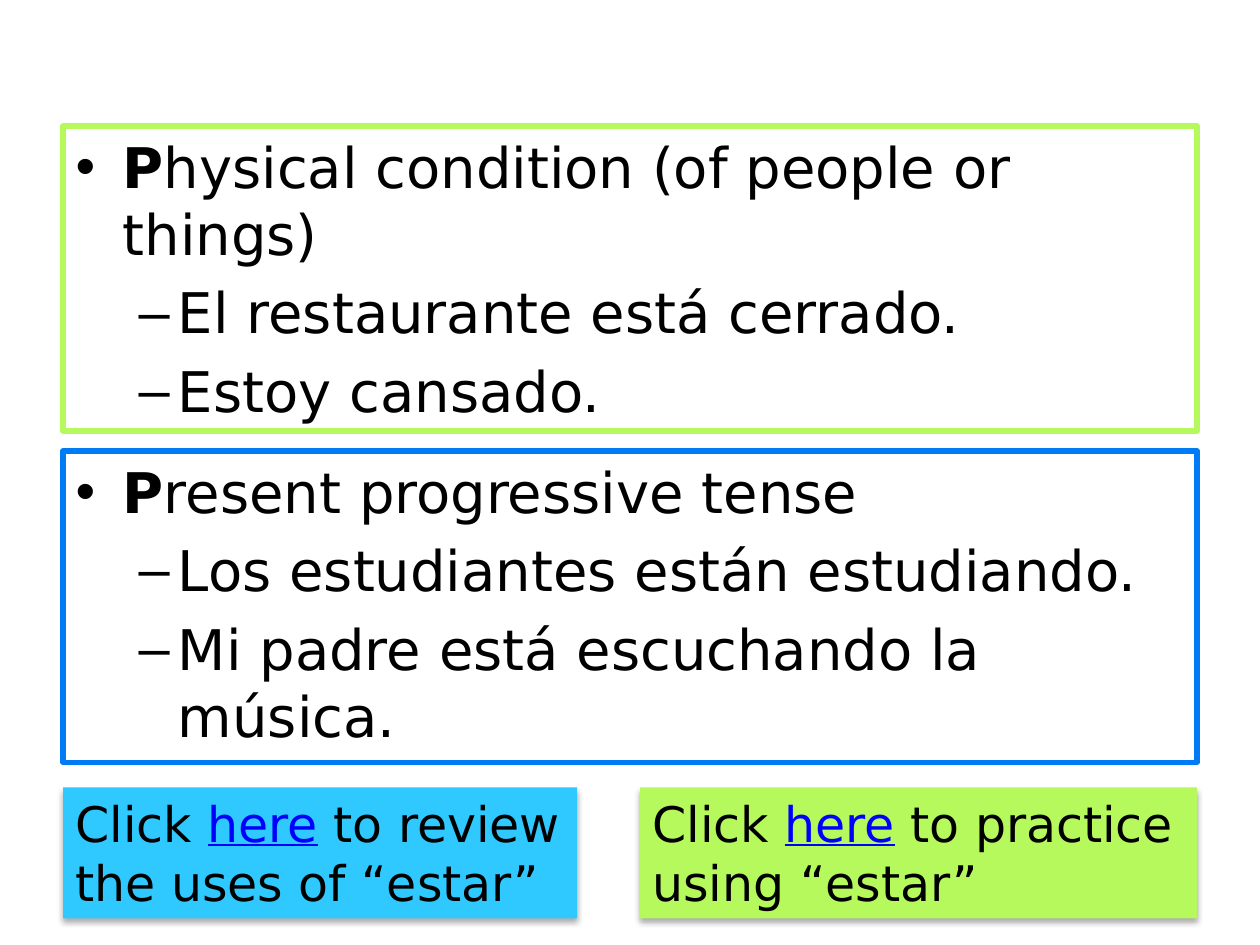
"""Build a slide on two uses of "estar" with a pair of call-out boxes."""
from lxml.etree import SubElement as Sub
from pptx import Presentation
from pptx.dml.color import RGBColor as Rgb
from pptx.enum.text import MSO_AUTO_SIZE as Fit
from pptx.oxml.ns import qn
from pptx.util import Emu, Pt

PX = 9144
FONT = "DejaVu Sans"


def tint(code):
    return Rgb.from_string(code)


def add_run(para, text, size, color="000000", bold=False, line=False):
    run = para.add_run()
    run.text = text
    font = run.font
    font.name, font.size = FONT, Pt(size)
    font.bold, font.underline = bold, line
    font.color.rgb = tint(color)


deck = Presentation()
deck.slide_width, deck.slide_height = Emu(1000 * PX), Emu(750 * PX)
slide = deck.slides.add_slide(deck.slide_layouts[3])
title = slide.shapes.title.element
title.getparent().remove(title)

lists = [
    (1, 100, 242, "B6F95D", "P", "hysical condition (of people or things)",
     ["El restaurante está cerrado.", "Estoy cansado."]),
    (2, 358, 247, "007BF6", "P", "resent progressive tense",
     ["Los estudiantes están estudiando.",
      "Mi padre está escuchando la música."]),
]
for idx, top, high, edge, first, rest, items in lists:
    body = slide.placeholders[idx]
    body.left, body.top = Emu(50 * PX), Emu(top * PX)
    body.width, body.height = Emu(900 * PX), Emu(high * PX)
    body.line.color.rgb = tint(edge)
    body.line.width = Pt(3)
    frame = body.text_frame
    frame.auto_size = Fit.NONE
    para = frame.paragraphs[0]
    add_run(para, first, 32, bold=True)
    add_run(para, rest, 32)
    for item in items:
        para = frame.add_paragraph()
        para.level = 1
        add_run(para, item, 32)

group = slide.shapes.add_group_shape()
notes = [
    (50, 408, "2FC9FF", " to review the uses of “estar”"),
    (508, 442, "B6F95D", " to practice using “estar”"),
]
for left, wide, fill, tail in notes:
    box = group.shapes.add_textbox(
        Emu(left * PX), Emu(625 * PX), Emu(wide * PX), Emu(104 * PX))
    box.fill.solid()
    box.fill.fore_color.rgb = tint(fill)
    props = box.element.find(qn("p:spPr"))
    glow = Sub(Sub(props, qn("a:effectLst")), qn("a:outerShdw"),
               blurRad=str(Pt(3.5)), dist=str(Pt(2.2)), dir="5400000",
               rotWithShape="0")
    shade = Sub(glow, qn("a:srgbClr"), val="000000")
    Sub(shade, qn("a:alpha"), val="32000")
    frame = box.text_frame
    frame.word_wrap = True
    para = frame.paragraphs[0]
    add_run(para, "Click ", 28)
    add_run(para, "here", 28, "0000FF", line=True)
    add_run(para, tail, 28)

deck.save("out.pptx")
